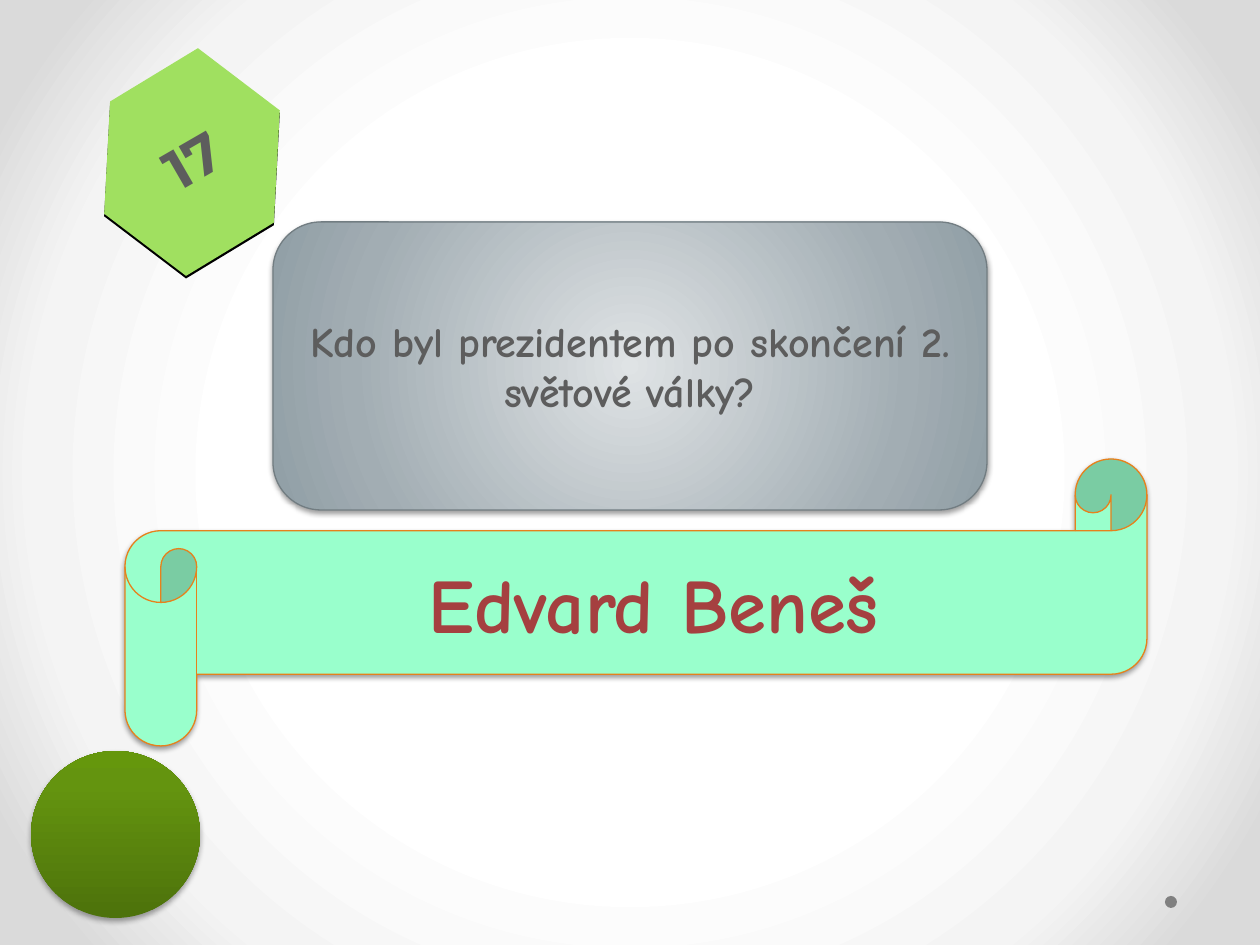
from lxml.etree import SubElement
from pptx import Presentation
from pptx.dml.color import RGBColor
from pptx.enum.shapes import MSO_SHAPE
from pptx.enum.text import MSO_ANCHOR, PP_ALIGN
from pptx.oxml import parse_xml
from pptx.oxml.ns import nsdecls, qn
from pptx.util import Emu, Pt

SCALE = 914400 / 126
COLORS = {
    "number": "5D5D5D",
    "question": "5D5D5D",
    "answer": "A54040",
    "hexagon": "A0E060",
    "scroll": "99FFCC",
    "scroll_line": "E6811C",
    "card_line": "727D82",
    "dot": "808080",
    "shadow": "000000",
}
BACKDROP = [(50, "FFFFFF"), (76, "F4F4F4"), (92, "DADADA")]
CARD = [(0, "DFE3E5"), (72, "A2ADB3"), (100, "909EA5")]
BUTTON = [(0, "4D720B"), (80, "64940F"), (100, "65970C")]
RADIAL = ('<a:path path="circle"><a:fillToRect l="50000" t="50000" '
          'r="50000" b="50000"/></a:path>')
UPWARD = '<a:lin ang="16200000" scaled="0"/>'


def px(length):
    return Emu(round(length * SCALE))


def color(name):
    return RGBColor.from_string(COLORS[name])


class QuizPage:
    """Draws styled quiz elements on one slide, measured in px."""

    def __init__(self, deck):
        self.page = deck.slides.add_slide(deck.slide_layouts[6])

    def gradient(self, fill, owner, stops, direction):
        fill.gradient()
        plain = owner.find(".//" + qn("a:gradFill"))
        marks = "".join(
            f'<a:gs pos="{place * 1000}"><a:srgbClr val="{value}"/></a:gs>'
            for place, value in stops)
        plain.getparent().replace(plain, parse_xml(
            f'<a:gradFill {nsdecls("a")} rotWithShape="1">'
            f'<a:gsLst>{marks}</a:gsLst>{direction}</a:gradFill>'))

    def backdrop(self, stops):
        self.gradient(self.page.background.fill, self.page._element, stops, RADIAL)

    def shape(self, kind, left, top, width, height, fill, line=None,
              direction=RADIAL, adjust=None, turn=0):
        box = self.page.shapes.add_shape(
            kind, px(left), px(top), px(width), px(height))
        box.rotation = turn
        box.shadow.inherit = False
        if adjust is not None:
            box.adjustments[0] = adjust
        if isinstance(fill, str):
            box.fill.solid()
            box.fill.fore_color.rgb = color(fill)
        else:
            self.gradient(box.fill, box._element, fill, direction)
        if line:
            box.line.color.rgb = color(line)
            box.line.width = Pt(0.75)
        else:
            box.line.fill.background()
        return box

    def shadow(self, box, blur, distance, opacity):
        effects = box._element.spPr.find(qn("a:effectLst"))
        cast = SubElement(effects, qn("a:outerShdw"), blurRad=str(Pt(blur)),
                          dist=str(Pt(distance)), dir="5400000", rotWithShape="0")
        tint = SubElement(cast, qn("a:srgbClr"), val=COLORS["shadow"])
        SubElement(tint, qn("a:alpha"), val=str(opacity * 1000))

    def caption(self, box, words, size, font, tint):
        frame = box.text_frame
        frame.word_wrap = True
        frame.vertical_anchor = MSO_ANCHOR.MIDDLE
        para = frame.paragraphs[0]
        para.alignment = PP_ALIGN.CENTER
        span = para.add_run()
        span.text = words
        span.font.size = Pt(size)
        span.font.name = font
        span.font.bold = True
        span.font.color.rgb = color(tint)

    def label(self, left, top, width, height, turn, *style):
        box = self.page.shapes.add_textbox(
            px(left), px(top), px(width), px(height))
        box.rotation = turn
        self.caption(box, *style)


def main():
    deck = Presentation()
    deck.slide_width, deck.slide_height = px(1260), px(945)
    quiz = QuizPage(deck)
    quiz.backdrop(BACKDROP)
    quiz.shape(MSO_SHAPE.OVAL, 1165, 896, 12, 12, "dot")

    badge = quiz.shape(MSO_SHAPE.HEXAGON, 78, 77, 228, 170, "hexagon",
                       adjust=0.34, turn=273)
    quiz.shadow(badge, 0, 1.5, 100)
    quiz.label(132, 119, 120, 80, 330, "17", 32, "Montserrat", "number")

    card = quiz.shape(MSO_SHAPE.ROUNDED_RECTANGLE, 273, 222, 714, 288,
                      CARD, "card_line")
    quiz.shadow(card, 3.1, 1.6, 38)
    quiz.caption(card, "Kdo byl prezidentem po skončení 2. světové války?",
                 24, "Comic Neue", "question")

    button = quiz.shape(MSO_SHAPE.OVAL, 31, 751, 169, 167, BUTTON,
                        direction=UPWARD)
    quiz.shadow(button, 3.1, 1.8, 35)

    scroll = quiz.shape(MSO_SHAPE.HORIZONTAL_SCROLL, 125, 459, 1022, 287,
                        "scroll", "scroll_line", adjust=0.25)
    quiz.shadow(scroll, 3.1, 1.6, 38)
    quiz.caption(scroll, "Edvard Beneš", 44, "Comic Neue", "answer")
    deck.save("out.pptx")


if __name__ == "__main__":
    main()
